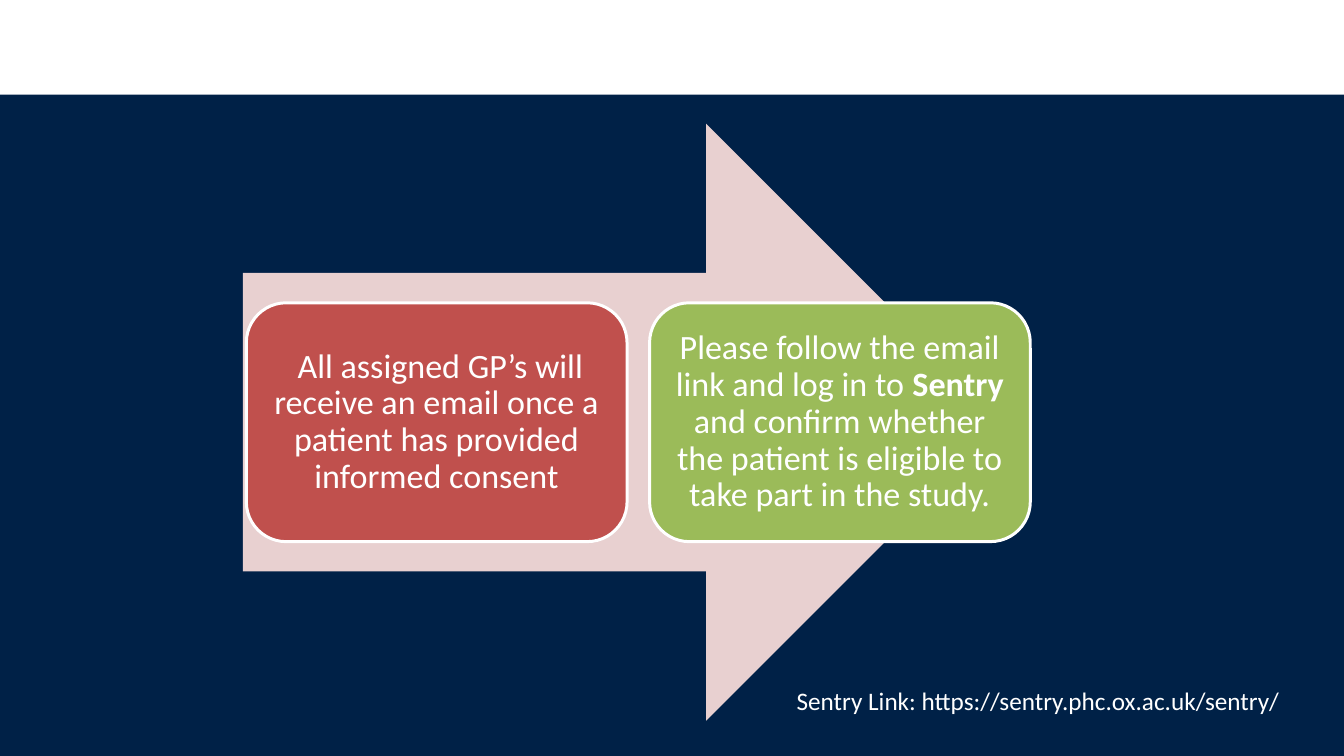
"""Build the slide showing the two steps GPs take to confirm patient eligibility."""
from dataclasses import dataclass

from pptx import Presentation
from pptx.dml.color import RGBColor
from pptx.enum.shapes import MSO_SHAPE
from pptx.enum.text import MSO_ANCHOR, PP_ALIGN
from pptx.util import Pt

RECT = MSO_SHAPE.RECTANGLE
ARROW = MSO_SHAPE.RIGHT_ARROW
ROUNDED = MSO_SHAPE.ROUNDED_RECTANGLE
MIDDLE = MSO_ANCHOR.MIDDLE
CENTER = PP_ALIGN.CENTER
LEFT = PP_ALIGN.LEFT


@dataclass(frozen=True)
class Theme:
    font: str = "Calibri"
    white: RGBColor = RGBColor(0xFF, 0xFF, 0xFF)
    navy: RGBColor = RGBColor(0x00, 0x21, 0x47)
    pink: RGBColor = RGBColor(0xE8, 0xD0, 0xD0)
    red: RGBColor = RGBColor(0xC0, 0x50, 0x4D)
    green: RGBColor = RGBColor(0x9B, 0xBB, 0x59)
    step_size: int = 23
    link_size: int = 17


THEME = Theme()
SLIDE_W, SLIDE_H = 907.2, 510.5
BAND_TOP = 64
STEP_LEFT, STEP_TOP, STEP_W, STEP_H = 166.3, 204.5, 257, 161.3
STEP_PITCH = 272.2


def add_block(s, kind, box, fill, line=None):
    sp = s.shapes.add_shape(kind, *map(Pt, box))
    sp.shadow.inherit = False
    sp.fill.solid()
    sp.fill.fore_color.rgb = fill
    if line is None:
        sp.line.fill.background()
    else:
        sp.line.color.rgb = line
        sp.line.width = Pt(2)
    return sp


def write_runs(p, runs, size, align):
    p.alignment = align
    for text, bold in runs:
        r = p.add_run()
        r.text = text
        font_format = {"name": THEME.font, "size": Pt(size), "bold": bold}
        for name, value in font_format.items():
            setattr(r.font, name, value)
        r.font.color.rgb = THEME.white


prs = Presentation()
prs.slide_width, prs.slide_height = Pt(SLIDE_W), Pt(SLIDE_H)
s = prs.slides.add_slide(prs.slide_layouts[6])

add_block(s, RECT, (0, BAND_TOP, SLIDE_W, SLIDE_H - BAND_TOP), THEME.navy)
add_block(s, ARROW, (163.9, 83.5, 514.3, 403.2), THEME.pink)

steps = [
    (THEME.red, [
        (" All assigned GP’s will receive an email once a patient has provided informed consent", False),
    ]),
    (THEME.green, [
        ("Please follow the email link and log in to ", False),
        ("Sentry", True),
        (" and confirm whether the patient is eligible to take part in the study.", False),
    ]),
]
for i, (fill, runs) in enumerate(steps):
    box = (STEP_LEFT + i * STEP_PITCH, STEP_TOP, STEP_W, STEP_H)
    sp = add_block(s, ROUNDED, box, fill, THEME.white)
    tf = sp.text_frame
    frame_format = {"word_wrap": True, "vertical_anchor": MIDDLE}
    frame_format.update({f"margin_{side}": Pt(7.2) for side in ("left", "top", "right", "bottom")})
    for name, value in frame_format.items():
        setattr(tf, name, value)
    p = tf.paragraphs[0]
    p.line_spacing = 0.9
    write_runs(p, runs, THEME.step_size, CENTER)

link = s.shapes.add_textbox(Pt(530.6), Pt(459.4), Pt(370), Pt(28))
tf = link.text_frame
tf.word_wrap = True
write_runs(tf.paragraphs[0], [("Sentry Link: https://sentry.phc.ox.ac.uk/sentry/", False)],
           THEME.link_size, LEFT)

prs.save("out.pptx")
